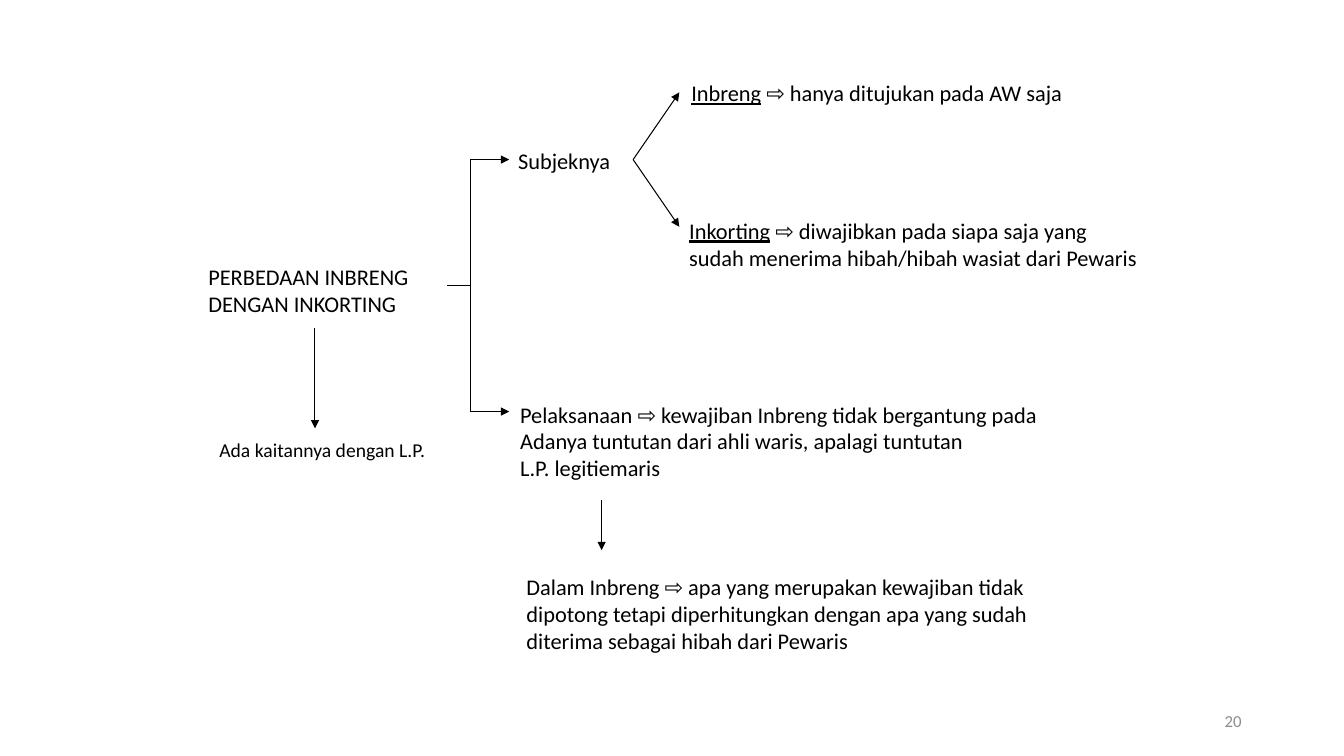
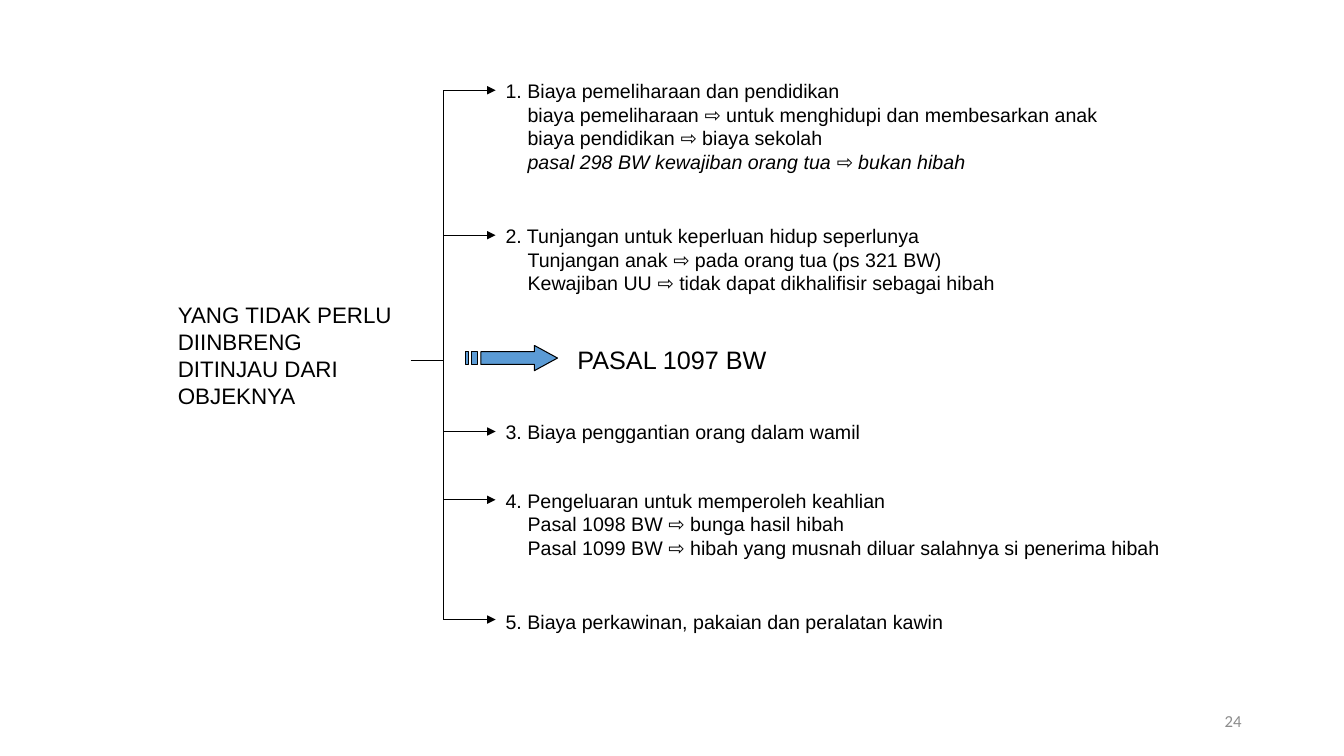
from lxml.etree import SubElement
from pptx import Presentation
from pptx.dml.color import RGBColor
from pptx.enum.shapes import MSO_CONNECTOR
from pptx.enum.text import MSO_ANCHOR, PP_ALIGN
from pptx.oxml.ns import qn
from pptx.util import Pt

PX = 9525
BLACK = RGBColor(0x00, 0x00, 0x00)
GREY = RGBColor(0x8C, 0x8C, 0x8C)
BLUE = RGBColor(0x5B, 0x9B, 0xD5)
LINE_WIDTH = Pt(0.75)


class Deck:
    """Holds the shared style and the slide being drawn."""

    def __init__(self):
        self.prs = Presentation()
        self.prs.slide_width = 1280 * PX
        self.prs.slide_height = 720 * PX

    def new_slide(self, number, font):
        self.shapes = self.prs.slides.add_slide(self.prs.slide_layouts[6]).shapes
        self.font = "Calibri"
        self.text(904, 667, 288, 38, [number], 12, PP_ALIGN.RIGHT, GREY)
        self.font = font

    def text(self, x, y, w, h, lines, size=16, align=PP_ALIGN.LEFT,
             color=BLACK, indent=0):
        """One paragraph a line; a line is a string or a list of (text, style)
        runs. The indent applies from the second line on."""
        tf = self.shapes.add_textbox(x * PX, y * PX, w * PX, h * PX).text_frame
        tf.word_wrap = True
        tf.vertical_anchor = MSO_ANCHOR.MIDDLE
        for i, line in enumerate(lines):
            p = tf.add_paragraph() if i else tf.paragraphs[0]
            p.alignment = align
            if i and indent:
                p._p.get_or_add_pPr().set("marL", str(indent * PX))
            for words, style in [(line, "")] if isinstance(line, str) else line:
                r = p.add_run()
                r.text = words
                r.font.name = self.font
                r.font.size = Pt(size)
                r.font.color.rgb = color
                if style == "underline":
                    r.font.underline = True
                elif style == "italic":
                    r.font.italic = True

    def line(self, x1, y1, x2, y2, arrow=False):
        sp = self.shapes.add_connector(
            MSO_CONNECTOR.STRAIGHT, x1 * PX, y1 * PX, x2 * PX, y2 * PX)
        sp.line.color.rgb = BLACK
        sp.line.width = LINE_WIDTH
        if arrow:
            SubElement(sp.line._get_or_add_ln(), qn("a:tailEnd"), type="triangle")
        SubElement(sp._element.spPr, qn("a:effectLst"))

    def bracket(self, stub_x, stub_y, spine_x, tip_x, branch_ys):
        """A stub, an upright spine and one arrow for each branch."""
        self.line(stub_x, stub_y, spine_x, stub_y)
        self.line(spine_x, branch_ys[0], spine_x, branch_ys[-1])
        for y in branch_ys:
            self.line(spine_x, y, tip_x, y, arrow=True)

    def striped_arrow(self, x, y):
        def box(left, right):
            return [(left, 6), (right, 6), (right, 18), (left, 18)]

        body = [(66, 0), (66, 6), (15, 6), (15, 18), (66, 18), (66, 24), (88, 12)]
        fb = self.shapes.build_freeform(*body[0], scale=PX)
        fb.add_line_segments(body[1:])
        for stripe in (box(6, 12), box(0, 3)):
            fb.move_to(*stripe[0])
            fb.add_line_segments(stripe[1:])
        sp = fb.convert_to_shape(x * PX, y * PX)
        sp.shadow.inherit = False
        sp.fill.solid()
        sp.fill.fore_color.rgb = BLUE
        sp.line.color.rgb = BLACK
        sp.line.width = LINE_WIDTH


def differences_slide(deck):
    deck.new_slide("20", "Calibri")
    deck.text(189, 240, 236, 72, ["PERBEDAAN INBRENG", "DENGAN INKORTING"])
    deck.text(196, 408, 222, 40, ["Ada kaitannya dengan L.P."], 14, PP_ALIGN.CENTER)
    deck.text(484, 133, 118, 40, ["Subjeknya"])
    deck.text(649, 64, 376, 48, [
        [("Inbreng", "underline"), (" ⇨ hanya ditujukan pada AW saja", "")]])
    deck.text(647, 192, 450, 80, [
        [("Inkorting", "underline"), (" ⇨ diwajibkan pada siapa saja yang", "")],
        "sudah menerima hibah/hibah wasiat dari Pewaris"])
    deck.text(486, 364, 524, 112, [
        "Pelaksanaan ⇨ kewajiban Inbreng tidak bergantung pada",
        "Adanya tuntutan dari ahli waris, apalagi tuntutan",
        "L.P. legitiemaris"])
    deck.text(492, 524, 510, 120, [
        "Dalam Inbreng ⇨ apa yang merupakan kewajiban tidak",
        "dipotong tetapi diperhitungkan dengan apa yang sudah",
        "diterima sebagai hibah dari Pewaris"])
    deck.bracket(426, 272, 448, 485, [152, 392])
    for y in (88, 216):
        deck.line(603, 152, 647, y, arrow=True)
    deck.line(573, 476, 573, 524, arrow=True)
    deck.line(300, 312, 300, 408, arrow=True)


def exemptions_slide(deck):
    deck.new_slide("24", "Arial")
    deck.text(160, 278, 232, 120, [
        "YANG TIDAK PERLU", "DIINBRENG", "DITINJAU DARI", "OBJEKNYA"])
    # top, height, arrow height, lines
    items = [
        (64, 112, 86, [
            "1. Biaya pemeliharaan dan pendidikan",
            "biaya pemeliharaan ⇨ untuk menghidupi dan membesarkan anak",
            "biaya pendidikan ⇨ biaya sekolah",
            [("pasal 298 BW kewajiban orang tua ⇨ bukan hibah", "italic")]]),
        (203, 88, 224, [
            "2. Tunjangan untuk keperluan hidup seperlunya",
            "Tunjangan anak ⇨ pada orang tua (ps 321 BW)",
            "Kewajiban UU ⇨ tidak dapat dikhalifisir sebagai hibah"]),
        (391, 40, 411, ["3. Biaya penggantian orang dalam wamil"]),
        (455, 88, 476, [
            "4. Pengeluaran untuk memperoleh keahlian",
            "Pasal 1098 BW ⇨ bunga hasil hibah",
            "Pasal 1099 BW ⇨ hibah yang musnah diluar salahnya si penerima hibah"]),
        (568, 48, 590, ["5. Biaya perkawinan, pakaian dan peralatan kawin"]),
    ]
    for top, height, _, lines in items:
        deck.text(472, top, 670, height, lines, 14, indent=21)
    deck.text(536, 318, 208, 48, ["PASAL 1097 BW"], 18, PP_ALIGN.CENTER)
    deck.striped_arrow(443, 329)
    deck.bracket(391, 343, 422, 472, [item[2] for item in items])


def main():
    deck = Deck()
    differences_slide(deck)
    exemptions_slide(deck)
    deck.prs.save("out.pptx")


if __name__ == "__main__":
    main()
